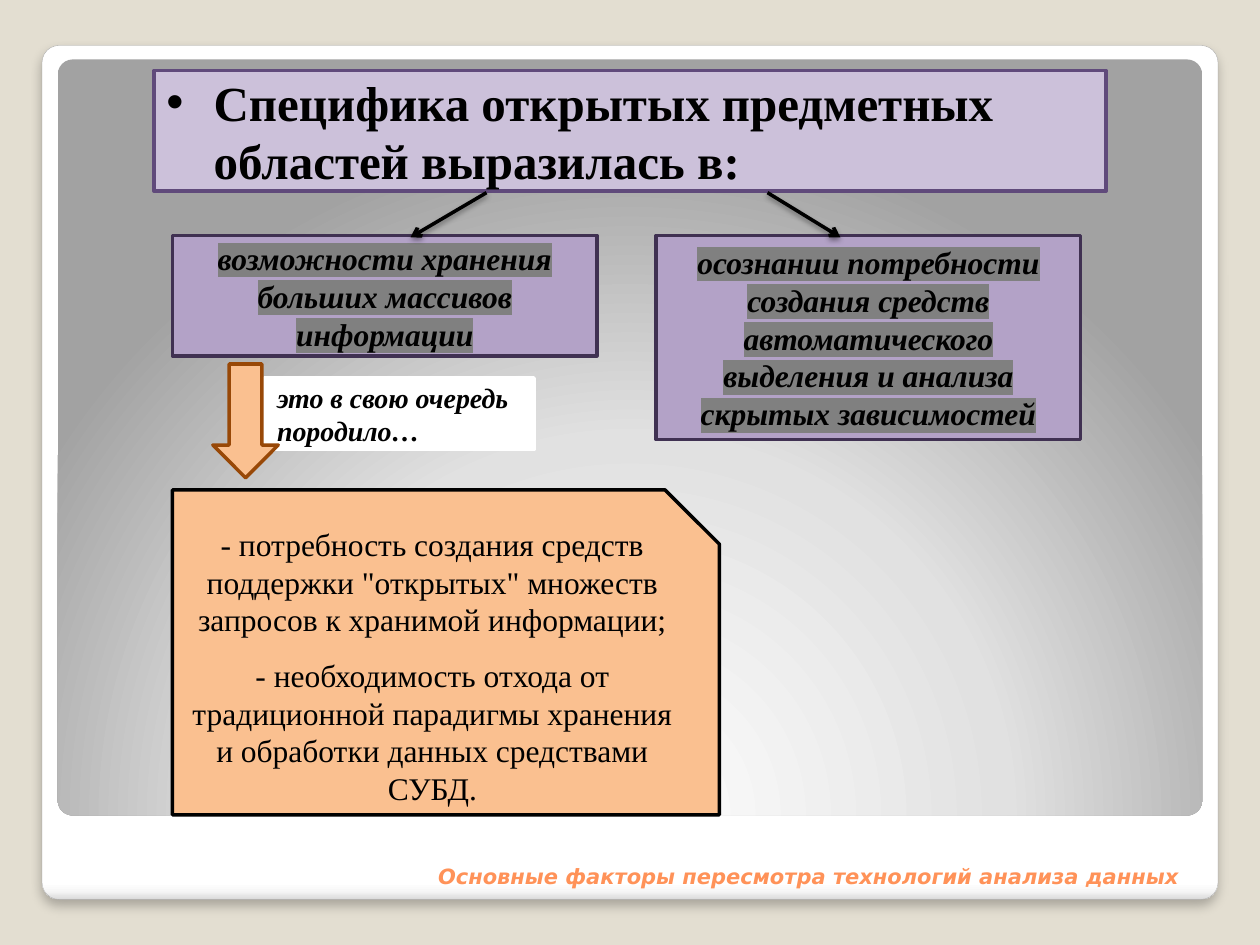
from dataclasses import dataclass

from lxml.etree import SubElement
from pptx import Presentation
from pptx.dml.color import RGBColor as RGB
from pptx.enum.shapes import MSO_CONNECTOR as CONN, MSO_SHAPE as SHAPE
from pptx.enum.text import MSO_ANCHOR as ANCHOR, MSO_AUTO_SIZE as AUTO, PP_ALIGN as ALIGN
from pptx.oxml import parse_xml
from pptx.oxml.ns import nsdecls, qn
from pptx.util import Pt


@dataclass(frozen=True)
class Theme:
    """Colours, fonts and type sizes of the slide."""
    back: str = "E3DED1"
    white: str = "FFFFFF"
    black: str = "000000"
    edge: str = "A4A4A4"
    title: str = "FF9258"
    lilac: str = "CCC1DA"
    lilac_line: str = "604A7B"
    violet: str = "B3A2C7"
    violet_line: str = "403152"
    orange: str = "FAC090"
    orange_line: str = "984807"
    mark: str = "808080"
    frame_stops: tuple = ((0, "FFFFFF"), (98, "FFFFFF"), (99, "F7F7F7"), (100, "DADADA"))
    panel_stops: tuple = ((0, "FFFFFF"), (55, "E1E1E1"), (100, "A2A2A2"))
    title_font: str = "DejaVu Sans"
    font: str = "Times New Roman"
    title_size: int = 12
    note_size: int = 16
    text_size: int = 18
    head_size: int = 28
    stroke: int = 2


T = Theme()


def points(*values):
    """Turn numbers into point lengths."""
    return [Pt(v) for v in values]


def set_effects(sp, alpha=None, blur=0, dist=0):
    """Give a shape a downward shadow, or none at all."""
    effects = SubElement(sp._element.spPr, qn("a:effectLst"))
    if alpha:
        effects.append(parse_xml(
            f'<a:outerShdw {nsdecls("a")} blurRad="{Pt(blur)}" dist="{Pt(dist)}" dir="5400000" '
            f'rotWithShape="0"><a:srgbClr val="{T.black}"><a:alpha val="{alpha * 1000}"/>'
            f'</a:srgbClr></a:outerShdw>'))


def set_gradient(sp, stops, direction):
    """Fill a shape with a gradient."""
    sp.fill.background()
    spPr = sp._element.spPr
    stop_xml = "".join(f'<a:gs pos="{pos * 1000}"><a:srgbClr val="{c}"/></a:gs>' for pos, c in stops)
    spPr.replace(spPr.find(qn("a:noFill")), parse_xml(
        f'<a:gradFill {nsdecls("a")} rotWithShape="1"><a:gsLst>{stop_xml}</a:gsLst>'
        f'{direction}</a:gradFill>'))


def set_line(sp, color, width=T.stroke):
    """Colour an outline and set its width."""
    sp.line.color.rgb = RGB.from_string(color)
    sp.line.width = Pt(width)


def set_text(sp, texts, align, color=T.black, gap=0, anchor=ANCHOR.MIDDLE, mark=None, **font):
    """Write one paragraph per text and format its run."""
    tf = sp.text_frame
    for name, value in dict(word_wrap=True, auto_size=AUTO.NONE, vertical_anchor=anchor).items():
        setattr(tf, name, value)
    for i, text in enumerate(texts):
        p = tf.add_paragraph() if i else tf.paragraphs[0]
        p.alignment = align
        p.space_before = Pt(gap if i else 0)
        r = p.add_run()
        r.text = text
        r.font.color.rgb = RGB.from_string(color)
        for name, value in {"name": T.font, **font}.items():
            setattr(r.font, name, value)
        if mark:
            r._r.rPr.find(qn("a:latin")).addprevious(parse_xml(
                f'<a:highlight {nsdecls("a")}><a:srgbClr val="{mark}"/></a:highlight>'))


def add_box(s, box, fill, line, kind=SHAPE.RECTANGLE):
    """Add a flat filled and outlined shape."""
    sp = s.shapes.add_shape(kind, *points(*box))
    sp.shadow.inherit = False
    sp.fill.solid()
    sp.fill.fore_color.rgb = RGB.from_string(fill)
    set_line(sp, line)
    return sp


def add_arrow(s, start, end):
    """Add a shadowed connector with an open arrowhead."""
    c = s.shapes.add_connector(CONN.STRAIGHT, *points(*start, *end))
    set_line(c, T.black)
    SubElement(c.line._get_or_add_ln(), qn("a:tailEnd"), type="arrow")
    set_effects(c, 38, 3.1, 1.6)


def add_frame(s, box):
    """Draw the white card and the grey panel inside it."""
    x, y, w, h = box
    card, panel = [s.shapes.add_shape(SHAPE.ROUNDED_RECTANGLE, *points(*b))
                   for b in (box, (x + 9, y + 8, w - 18, h - 56))]
    for sp in (card, panel):
        sp.adjustments[0] = 0.02
    set_gradient(card, T.frame_stops, '<a:lin ang="5400000" scaled="0"/>')
    set_gradient(panel, T.panel_stops,
                 '<a:path path="circle"><a:fillToRect l="50000" t="175000" r="50000" b="-75000"/></a:path>')
    set_line(card, T.edge, 0.16)
    panel.line.fill.background()
    set_effects(card, 25, 6, 4)
    set_effects(panel)


def add_title(s, box, text):
    """Move the title placeholder to the foot of the card."""
    sp = s.shapes.title
    s.shapes._spTree.append(sp._element)
    for name, value in zip(("left", "top", "width", "height"), points(*box)):
        setattr(sp, name, value)
    set_text(sp, [text], ALIGN.RIGHT, T.title, anchor=ANCHOR.BOTTOM, name=T.title_font,
             size=Pt(T.title_size), bold=True, italic=True)


def add_heading(s, box, text):
    """Add the bulleted heading box."""
    sp = add_box(s, box, T.lilac, T.lilac_line)
    set_text(sp, [text], ALIGN.LEFT, size=Pt(T.head_size), bold=True)
    pPr = sp.text_frame.paragraphs[0]._p.get_or_add_pPr()
    pPr.set("marL", str(Pt(27)))
    pPr.set("indent", str(Pt(-27)))
    SubElement(pPr, qn("a:buFont"), typeface="Arial")
    SubElement(pPr, qn("a:buChar"), char="•")


def add_factors(s, box, items):
    """Add the factor boxes side by side with arrows from the heading."""
    x, y, w, h = box
    width = 242.6
    step = (w - width) / (len(items) - 1)
    for i, (text, share, start, end) in enumerate(items):
        sp = add_box(s, (x + i * step, y, width, h * share), T.violet, T.violet_line)
        set_text(sp, [text], ALIGN.CENTER, mark=T.mark, size=Pt(T.text_size), bold=True, italic=True)
        add_arrow(s, (x + start, y - 24.5), (x + end, y + 1))


def add_outcome(s, box, note, texts):
    """Add the block arrow, its note and the card of consequences."""
    x, y, w, h = box
    sp = add_box(s, (x + 52.6, y + 8, 154, 41), T.white, T.white)
    set_text(sp, [note], ALIGN.LEFT, size=Pt(T.note_size), bold=True, italic=True)
    add_box(s, (x + 23, y, 37.4, 65), T.orange, T.orange_line, SHAPE.DOWN_ARROW)
    sp = add_box(s, (x, y + 72, w, h - 72), T.orange, T.black, SHAPE.SNIP_1_RECTANGLE)
    set_text(sp, texts, ALIGN.CENTER, gap=10, size=Pt(T.text_size))


def main():
    """Build the slide and save it."""
    prs = Presentation()
    prs.slide_width, prs.slide_height = points(720, 540)
    s = prs.slides.add_slide(prs.slide_layouts[5])
    s.background.fill.solid()
    s.background.fill.fore_color.rgb = RGB.from_string(T.back)
    add_frame(s, (24, 26, 672, 488))
    add_title(s, (36.7, 485.3, 644.4, 26), "Основные факторы пересмотра технологий анализа данных")
    add_heading(s, (88, 40.3, 544, 69), "Специфика открытых предметных областей выразилась в:")
    add_factors(s, (98.6, 134.6, 519, 116.6), [
        ("возможности хранения больших массивов информации", 0.59, 179.4, 136),
        ("осознании потребности создания средств автоматического выделения и анализа "
         "скрытых зависимостей", 1, 340, 381.6)])
    add_outcome(s, (98.6, 208, 312.5, 257.6), "это в свою очередь породило…", [
        "- потребность создания средств поддержки \"открытых\" множеств запросов к хранимой информации;",
        "- необходимость отхода от традиционной парадигмы хранения и обработки данных средствами СУБД."])
    prs.save("out.pptx")


if __name__ == "__main__":
    main()
